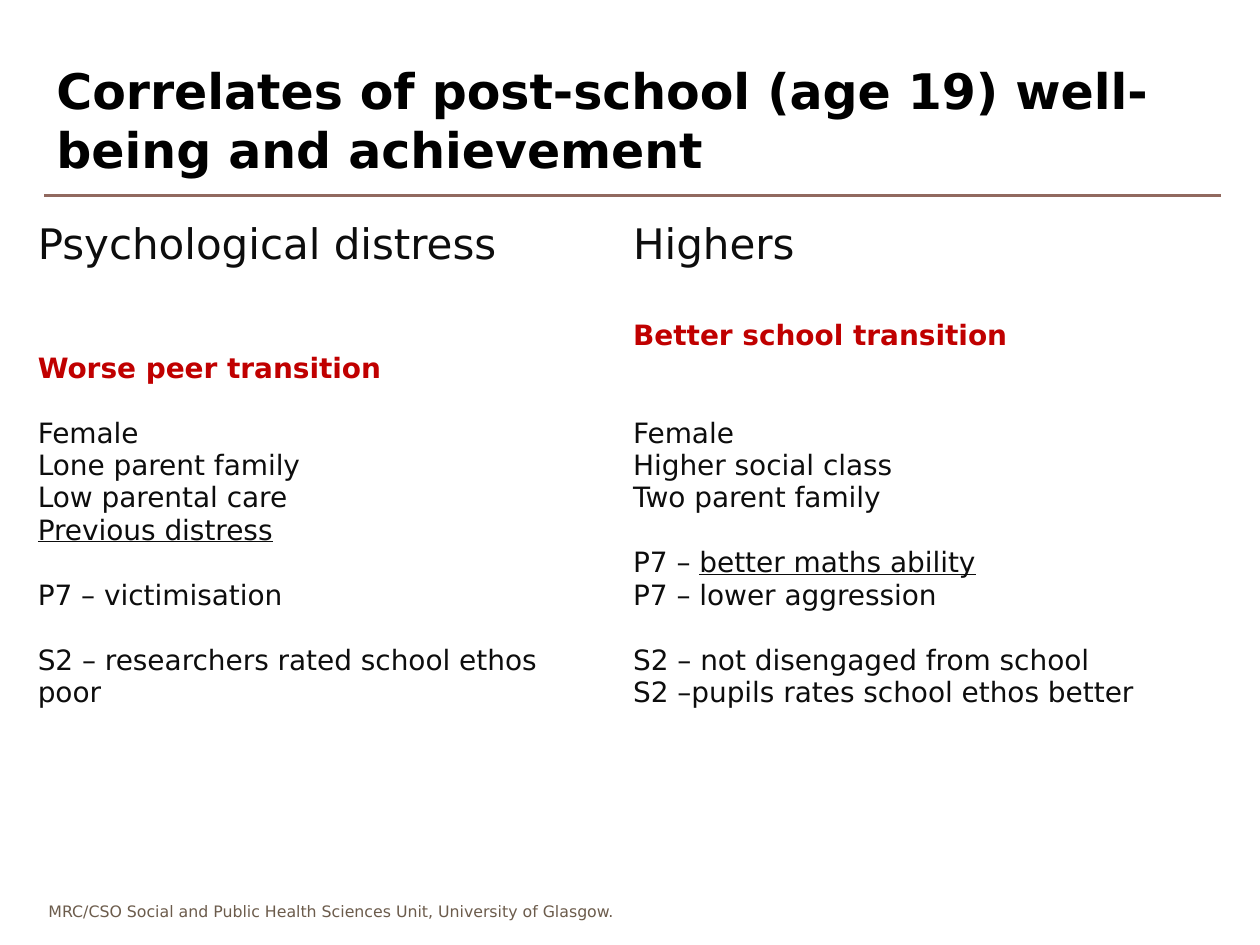
import pptx
import pptx.util
import pptx.dml.color
import pptx.enum.shapes
import pptx.enum.text
from lxml import etree

Inches = pptx.util.Inches
Pt = pptx.util.Pt
ALIGN = pptx.enum.text.PP_ALIGN
ANCHOR = pptx.enum.text.MSO_ANCHOR

INK, RED, WHITE = "0D0D0D", "C00000", "FFFFFF"
LINE = 18.6  # height in points of one line of 16 point text


def color(code):
    return pptx.dml.color.RGBColor.from_string(code)


def write(para, text, font="DejaVu Sans", size=16, fill=INK, bold=False,
          under=False, align=ALIGN.LEFT, gap=0):
    """Add a run to a paragraph; gap is the space before it in lines."""
    para.alignment = align
    if gap:
        para.space_before = Pt(gap * LINE)
    run = para.add_run()
    run.text = text
    face = run.font
    face.name, face.size = font, Pt(size)
    face.bold, face.underline = bold, under
    face.color.rgb = color(fill)


class Page:
    def __init__(self, deck):
        self.slide = deck.slides.add_slide(deck.slide_layouts[6])
        self.shapes = self.slide.shapes

    def text(self, box, words, wrap=True, anchor=ANCHOR.TOP, **style):
        frame = self.shapes.add_textbox(*map(Inches, box)).text_frame
        frame.word_wrap = wrap
        frame.vertical_anchor = anchor
        write(frame.paragraphs[0], words, **style)

    def rule(self, x, y, end, fill, width):
        line = self.shapes.add_connector(
            pptx.enum.shapes.MSO_CONNECTOR.STRAIGHT,
            Inches(x), Inches(y), Inches(end), Inches(y))
        line.line.color.rgb = color(fill)
        line.line.width = Pt(width)
        props = line._element.spPr
        etree.SubElement(props, pptx.oxml.ns.qn("a:effectLst"))

    def table(self, box, rows):
        grid = self.shapes.add_table(len(rows), 2, *map(Inches, box)).table
        for row, high in zip(grid.rows, rows):
            row.height = Inches(high)
            for cell in row.cells:
                cell.fill.solid()
                cell.fill.fore_color.rgb = color(WHITE)
        return grid

    def fill(self, cell, lines, top=0.05):
        """Write one paragraph for each (runs, style) pair."""
        cell.margin_top = Inches(top)
        frame = cell.text_frame
        for i, (runs, style) in enumerate(lines):
            para = frame.add_paragraph() if i else frame.paragraphs[0]
            for j, words in enumerate(runs):
                write(para, words, **{"under": j > 0, **style})


HEAD = {"fill": RED, "bold": True}
GAP = {"gap": 1}

DISTRESS = [
    (["Worse peer transition"], HEAD),
    (["Female"], GAP),
    (["Lone parent family"], {}),
    (["Low parental care"], {}),
    (["Previous distress"], {"under": True}),
    (["P7 – victimisation"], GAP),
    (["S2 – researchers rated school ethos poor"], GAP),
]
HIGHERS = [
    (["Better school transition"], HEAD),
    (["Female"], {"gap": 2}),
    (["Higher social class"], {}),
    (["Two parent family"], {}),
    (["P7 – ", "better maths ability"], GAP),
    (["P7 – lower aggression"], {}),
    (["S2 – not disengaged from school"], GAP),
    (["S2 –pupils rates school ethos better"], {}),
]


def main():
    deck = pptx.Presentation()
    deck.slide_width, deck.slide_height = Inches(10), Inches(7.5)
    page = Page(deck)
    page.text((0.25, 7.11, 4.75, 0.25),
              "MRC/CSO Social and Public Health Sciences Unit, "
              "University of Glasgow.",
              wrap=False, size=9, fill="6C5C4C", align=ALIGN.CENTER)
    page.rule(0.35, 1.55, 9.69, "91695F", 1.75)
    page.text((0.35, 0.5, 9.33, 0.89),
              "Correlates of post-school (age 19) well-being and achievement",
              anchor=ANCHOR.MIDDLE, size=28, fill="000000", bold=True)

    rows = [0.79, 3.3, 0.55, 0.55]
    grid = page.table((0.2, 1.7, 9.45, sum(rows)), rows)
    for col, name in enumerate(["Psychological distress", "Highers"]):
        page.fill(grid.cell(0, col), [([name], {"size": 24})])
    page.fill(grid.cell(1, 0), DISTRESS, top=0.05 + LINE / 72)
    page.fill(grid.cell(1, 1), HIGHERS)
    deck.save("out.pptx")


if __name__ == "__main__":
    main()
